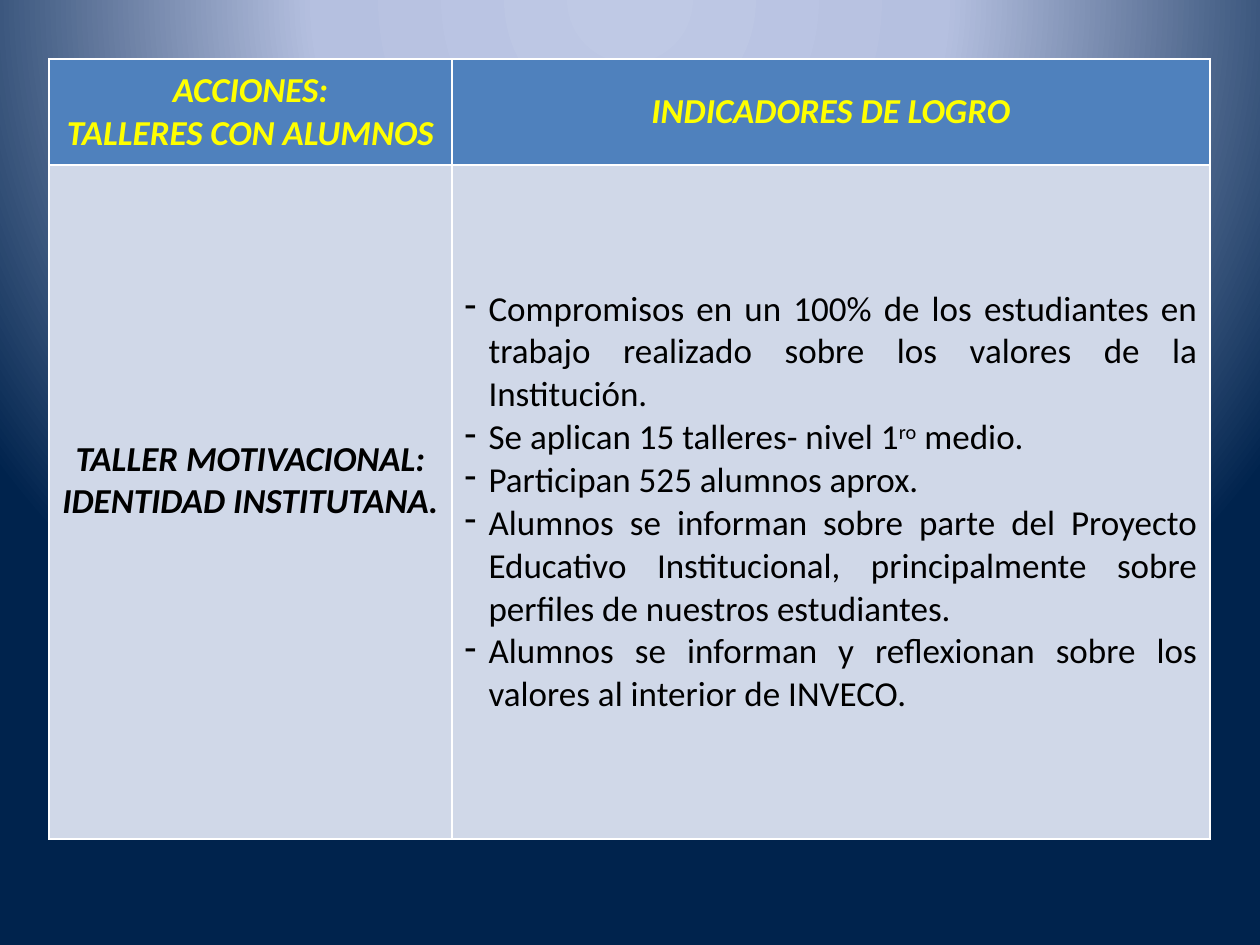
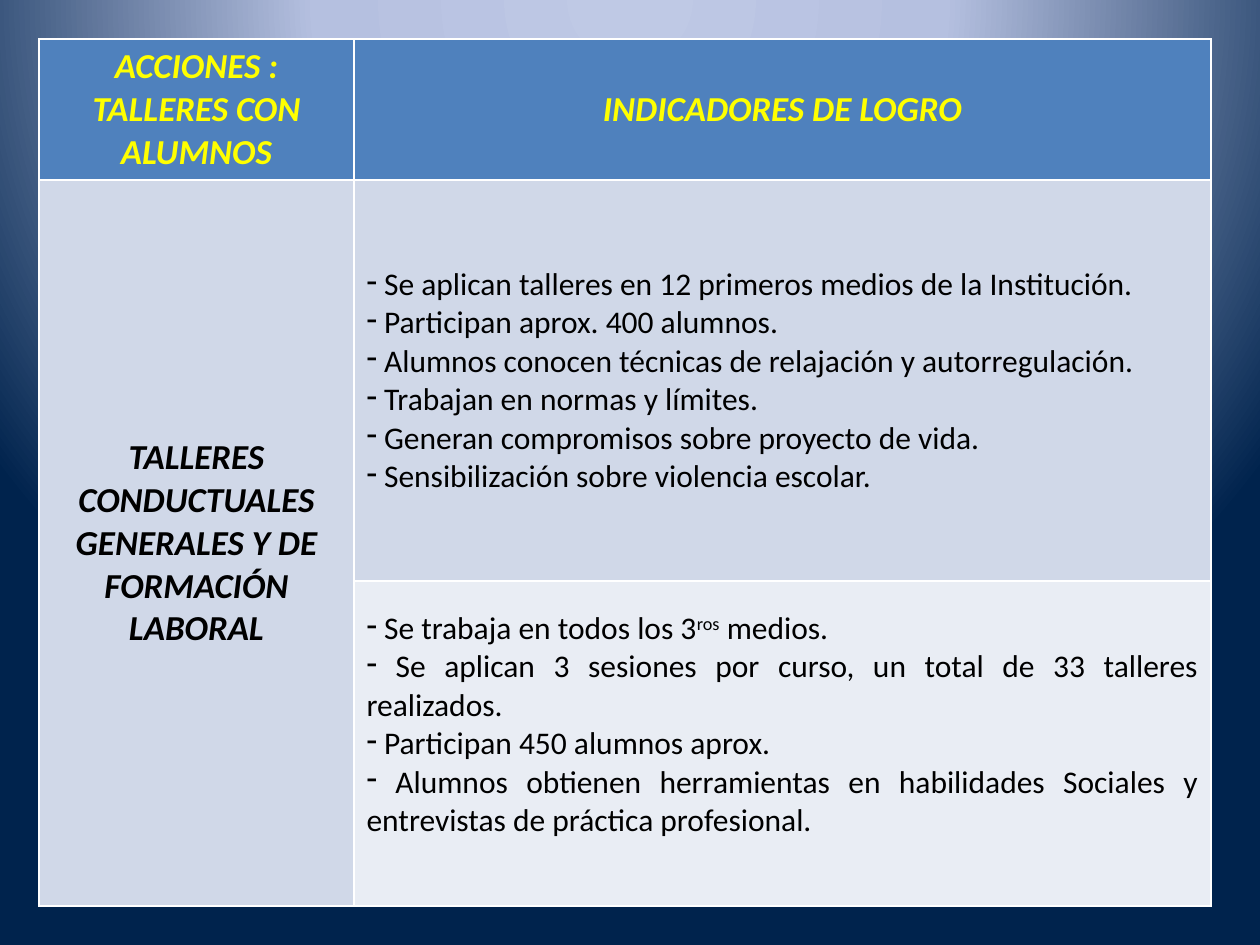
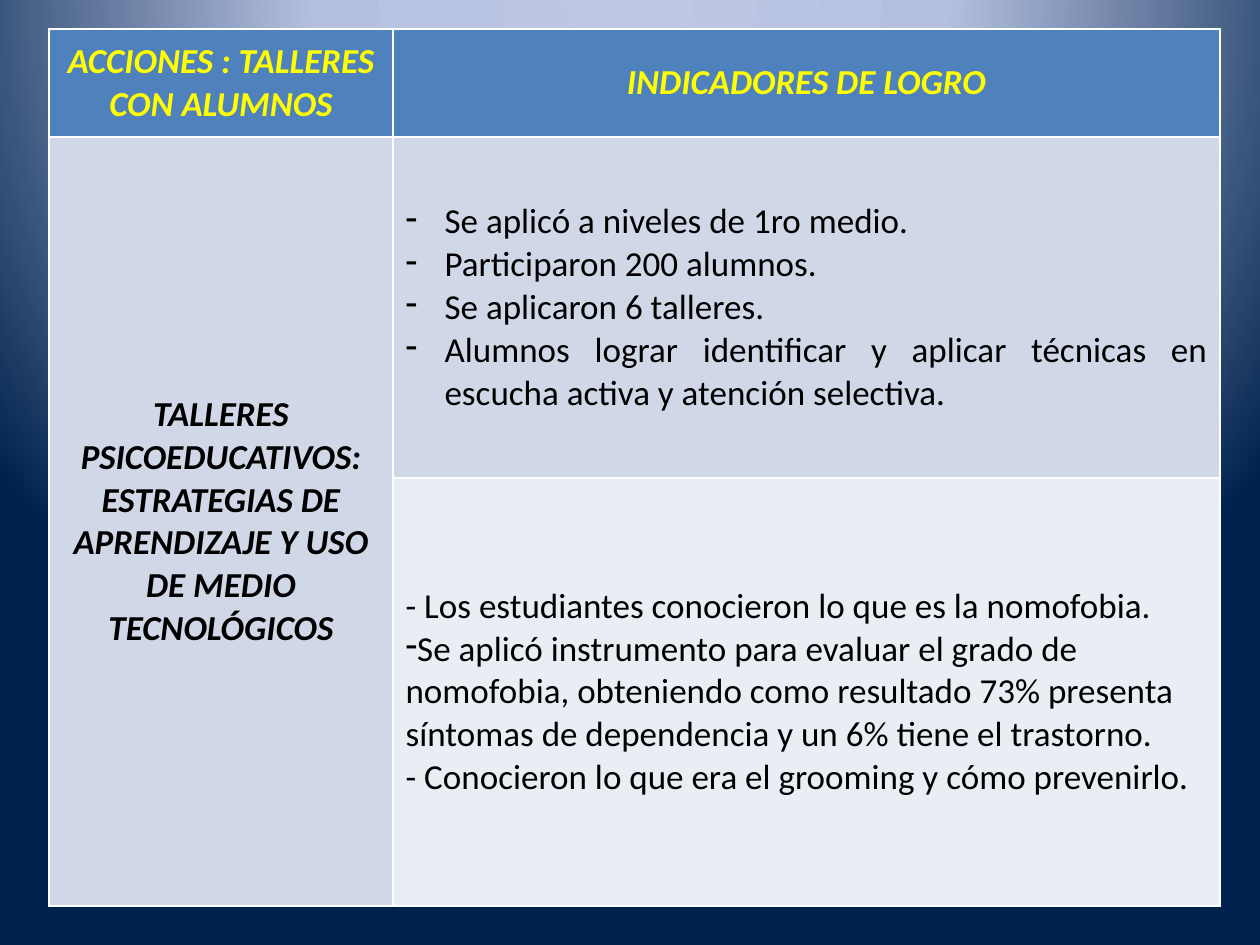
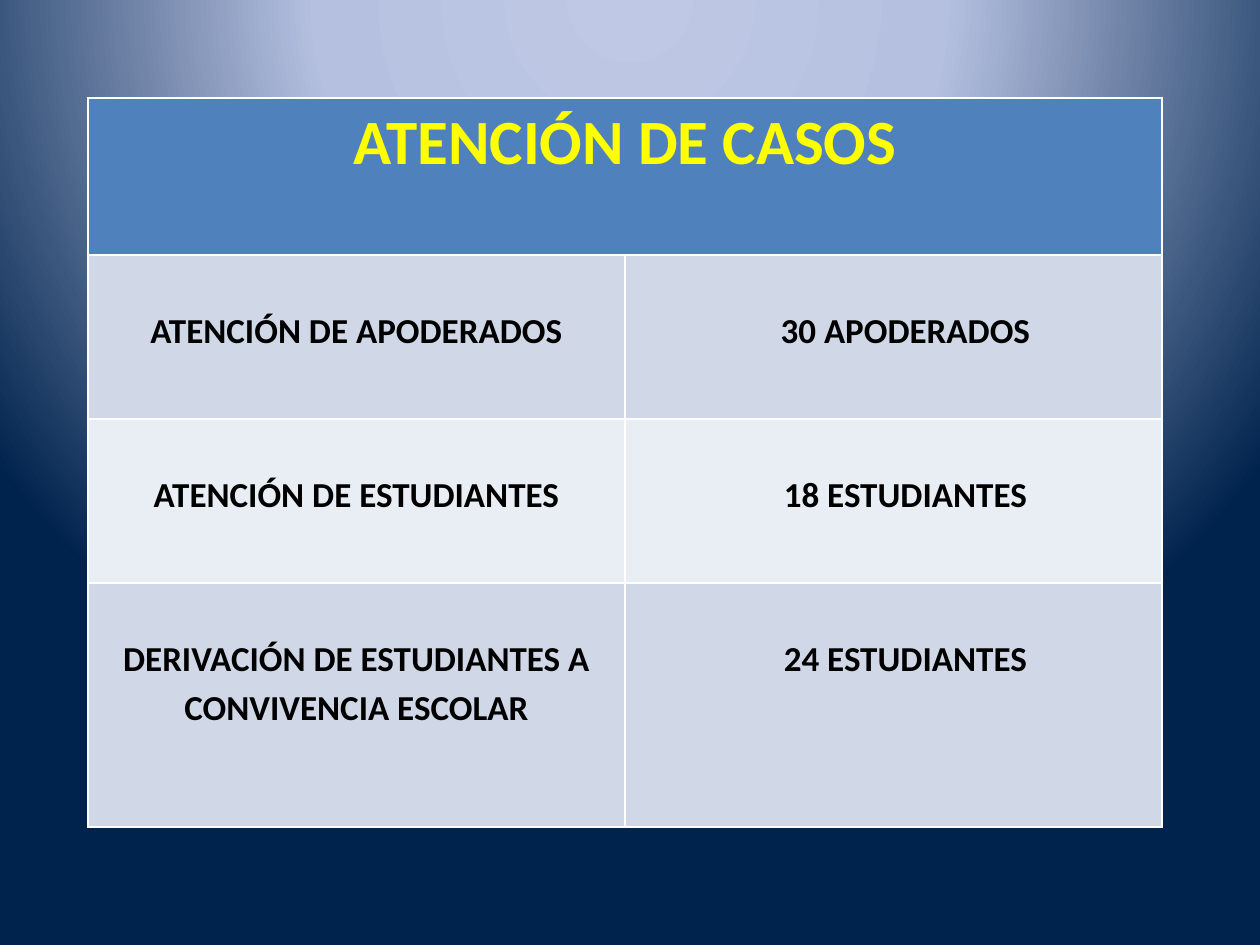
from dataclasses import dataclass, replace

from lxml import etree
from pptx import Presentation
from pptx.dml.color import RGBColor
from pptx.enum.text import MSO_ANCHOR, PP_ALIGN
from pptx.oxml import parse_xml
from pptx.oxml.ns import nsdecls, qn
from pptx.util import Pt

EMU_PER_PX = 914400 / 126
BLANK_LAYOUT = 6
FONT = "Calibri"
CENTER, JUSTIFY, LEFT = PP_ALIGN.CENTER, PP_ALIGN.JUSTIFY, PP_ALIGN.LEFT
TOP, MIDDLE = MSO_ANCHOR.TOP, MSO_ANCHOR.MIDDLE

YELLOW = "FFFF00"
BLACK = "000000"
HEADER_FILL = "4F81BD"
BAND_FILLS = ("D0D8E8", "E9EDF4")
BACKGROUND_STOPS = ((0, "BFC9E5"), (40, "B5C0E0"), (100, "00234D"))


@dataclass(frozen=True)
class TextStyle:
    size: int = 20
    color: str = BLACK
    bold: bool = False
    italic: bool = False
    align: PP_ALIGN = JUSTIFY
    bullet_indent: int | None = None
    line_spacing: float | None = None


HEADER = TextStyle(color=YELLOW, bold=True, italic=True, align=CENTER)
ACTION = replace(HEADER, color=BLACK)
PLAIN = TextStyle(align=LEFT)
DASHED = replace(PLAIN, bullet_indent=0)
SMALL_DASHED = TextStyle(size=18, bullet_indent=0)
NARROW_LIST = TextStyle(bullet_indent=24)
WIDE_LIST = TextStyle(bullet_indent=39)
CASE_TITLE = replace(HEADER, size=36, italic=False)
CASE = replace(ACTION, italic=False, line_spacing=1.15)


def px(value):
    return round(value * EMU_PER_PX)


def rgb(color):
    return RGBColor.from_string(color)


def set_background(master):
    master.background.fill.gradient()
    stops = "".join(
        f'<a:gs pos="{position * 1000}"><a:srgbClr val="{color}"/></a:gs>'
        for position, color in BACKGROUND_STOPS
    )
    gradient = parse_xml(
        f'<a:gradFill {nsdecls("a")} rotWithShape="1"><a:gsLst>{stops}</a:gsLst>'
        '<a:path path="circle">'
        '<a:fillToRect l="50000" t="-80000" r="50000" b="180000"/>'
        "</a:path></a:gradFill>"
    )
    previous = master.element.find(f".//{qn('p:bgPr')}/{qn('a:gradFill')}")
    previous.getparent().replace(previous, gradient)


def add_bullet(paragraph, indent):
    properties = paragraph._p.get_or_add_pPr()
    properties.set("marL", str(px(indent)))
    properties.set("indent", str(-px(indent)))
    etree.SubElement(properties, qn("a:buChar")).set("char", "-")


def add_runs(paragraph, text):
    for index, part in enumerate(text.split("^")):
        run = paragraph.add_run()
        run.text = part
        if index % 2:
            run._r.get_or_add_rPr().set("baseline", "30000")


def write_paragraph(paragraph, text, style):
    paragraph.alignment = style.align
    if style.line_spacing:
        paragraph.line_spacing = style.line_spacing
    if style.bullet_indent is not None:
        add_bullet(paragraph, style.bullet_indent)
    font = paragraph.font
    font.name = FONT
    font.size = Pt(style.size)
    font.bold = style.bold
    font.italic = style.italic
    font.color.rgb = rgb(style.color)
    add_runs(paragraph, text)


def write_cell(cell, style, *texts, anchor=MIDDLE):
    write_paragraphs(cell, [(text, style) for text in texts], anchor)


def write_paragraphs(cell, lines, anchor=MIDDLE):
    cell.vertical_anchor = anchor
    frame = cell.text_frame
    for index, (text, style) in enumerate(lines):
        paragraph = frame.add_paragraph() if index else frame.paragraphs[0]
        write_paragraph(paragraph, text, style)


def add_table(presentation, left, top, widths, heights):
    slide = presentation.slides.add_slide(presentation.slide_layouts[BLANK_LAYOUT])
    table = slide.shapes.add_table(
        len(heights), len(widths), px(left), px(top), px(sum(widths)), px(sum(heights))
    ).table
    for column, width in zip(table.columns, widths):
        column.width = px(width)
    for index, (row, height) in enumerate(zip(table.rows, heights)):
        row.height = px(height)
        color = BAND_FILLS[(index - 1) % 2] if index else HEADER_FILL
        for cell in row.cells:
            cell.fill.solid()
            cell.fill.fore_color.rgb = rgb(color)
    return table


def add_workshop_table(presentation, left, top, widths, heights, heading, action):
    table = add_table(presentation, left, top, widths, heights)
    write_cell(table.cell(0, 0), HEADER, *heading)
    write_cell(table.cell(0, 1), HEADER, "INDICADORES DE LOGRO")
    action_cell = table.cell(1, 0)
    if len(heights) > 2:
        action_cell.merge(table.cell(len(heights) - 1, 0))
    write_cell(action_cell, ACTION, action)
    return table


def add_identity_slide(presentation):
    table = add_workshop_table(
        presentation, 49, 59, (403, 758), (106, 674),
        ("ACCIONES:", "TALLERES CON ALUMNOS"),
        "TALLER MOTIVACIONAL: IDENTIDAD INSTITUTANA.",
    )
    table.cell(1, 0).margin_bottom = px(49)
    write_cell(
        table.cell(1, 1), NARROW_LIST,
        "Compromisos en un 100% de los estudiantes en trabajo realizado sobre "
        "los valores de la Institución.",
        "Se aplican 15 talleres- nivel 1^ro^ medio.",
        "Participan 525 alumnos aprox.",
        "Alumnos se informan sobre parte del Proyecto Educativo Institucional, "
        "principalmente sobre perfiles de nuestros estudiantes.",
        "Alumnos se informan y reflexionan sobre los valores al interior de INVECO.",
    )


def add_behaviour_slide(presentation):
    table = add_workshop_table(
        presentation, 39, 39, (315, 857), (141, 401, 325),
        ("ACCIONES : TALLERES CON ALUMNOS",),
        "TALLERES CONDUCTUALES GENERALES Y DE FORMACIÓN LABORAL",
    )
    write_cell(
        table.cell(1, 1), SMALL_DASHED,
        " Se aplican talleres en 12 primeros medios de la Institución.",
        " Participan aprox. 400 alumnos.",
        " Alumnos conocen técnicas de relajación y autorregulación.",
        " Trabajan en normas y límites.",
        " Generan compromisos sobre proyecto de vida.",
        " Sensibilización sobre violencia escolar.",
    )
    write_cell(
        table.cell(2, 1), SMALL_DASHED,
        " Se trabaja en todos los 3^ros^ medios.",
        " Se aplican 3 sesiones por curso, un total de 33 talleres realizados.",
        " Participan 450 alumnos aprox.",
        " Alumnos obtienen herramientas en habilidades Sociales y entrevistas "
        "de práctica profesional.",
    )
    table.cell(2, 1).margin_bottom = px(44)


def add_learning_slide(presentation):
    table = add_workshop_table(
        presentation, 49, 29, (344, 827), (108, 341, 428),
        ("ACCIONES : TALLERES CON ALUMNOS",),
        "TALLERES PSICOEDUCATIVOS: ESTRATEGIAS DE APRENDIZAJE Y USO DE MEDIO "
        "TECNOLÓGICOS",
    )
    write_cell(
        table.cell(1, 1), WIDE_LIST,
        "Se aplicó a niveles de 1ro medio.",
        "Participaron 200 alumnos.",
        "Se aplicaron 6 talleres.",
        "Alumnos lograr identificar y aplicar técnicas en escucha activa y "
        "atención selectiva.",
    )
    write_paragraphs(table.cell(2, 1), [
        ("- Los estudiantes conocieron lo que es la nomofobia.", PLAIN),
        ("Se aplicó instrumento para evaluar el grado de nomofobia, obteniendo "
         "como resultado 73% presenta síntomas de dependencia y un 6% tiene el "
         "trastorno.", DASHED),
        ("- Conocieron lo que era el grooming y cómo prevenirlo.", PLAIN),
    ])


def add_cases_slide(presentation):
    cases = (
        ("ATENCIÓN DE APODERADOS", "30 APODERADOS"),
        ("ATENCIÓN DE ESTUDIANTES", "18 ESTUDIANTES"),
        ("DERIVACIÓN DE ESTUDIANTES A CONVIVENCIA ESCOLAR", "24 ESTUDIANTES"),
    )
    table = add_table(presentation, 88, 98, (537, 537), (157, 164, 164, 244))
    table.cell(0, 0).merge(table.cell(0, 1))
    write_cell(table.cell(0, 0), CASE_TITLE, "ATENCIÓN DE CASOS", anchor=TOP)
    for row, case in enumerate(cases, start=1):
        for column, (text, left_margin) in enumerate(zip(case, (9, 33))):
            cell = table.cell(row, column)
            cell.margin_left, cell.margin_right = px(left_margin), px(9)
            cell.margin_top, cell.margin_bottom = px(49), 0
            write_cell(cell, CASE, text, anchor=TOP)


def main():
    presentation = Presentation()
    presentation.slide_width = px(1260)
    presentation.slide_height = px(945)
    set_background(presentation.slide_master)
    add_identity_slide(presentation)
    add_behaviour_slide(presentation)
    add_learning_slide(presentation)
    add_cases_slide(presentation)
    presentation.save("out.pptx")


if __name__ == "__main__":
    main()
